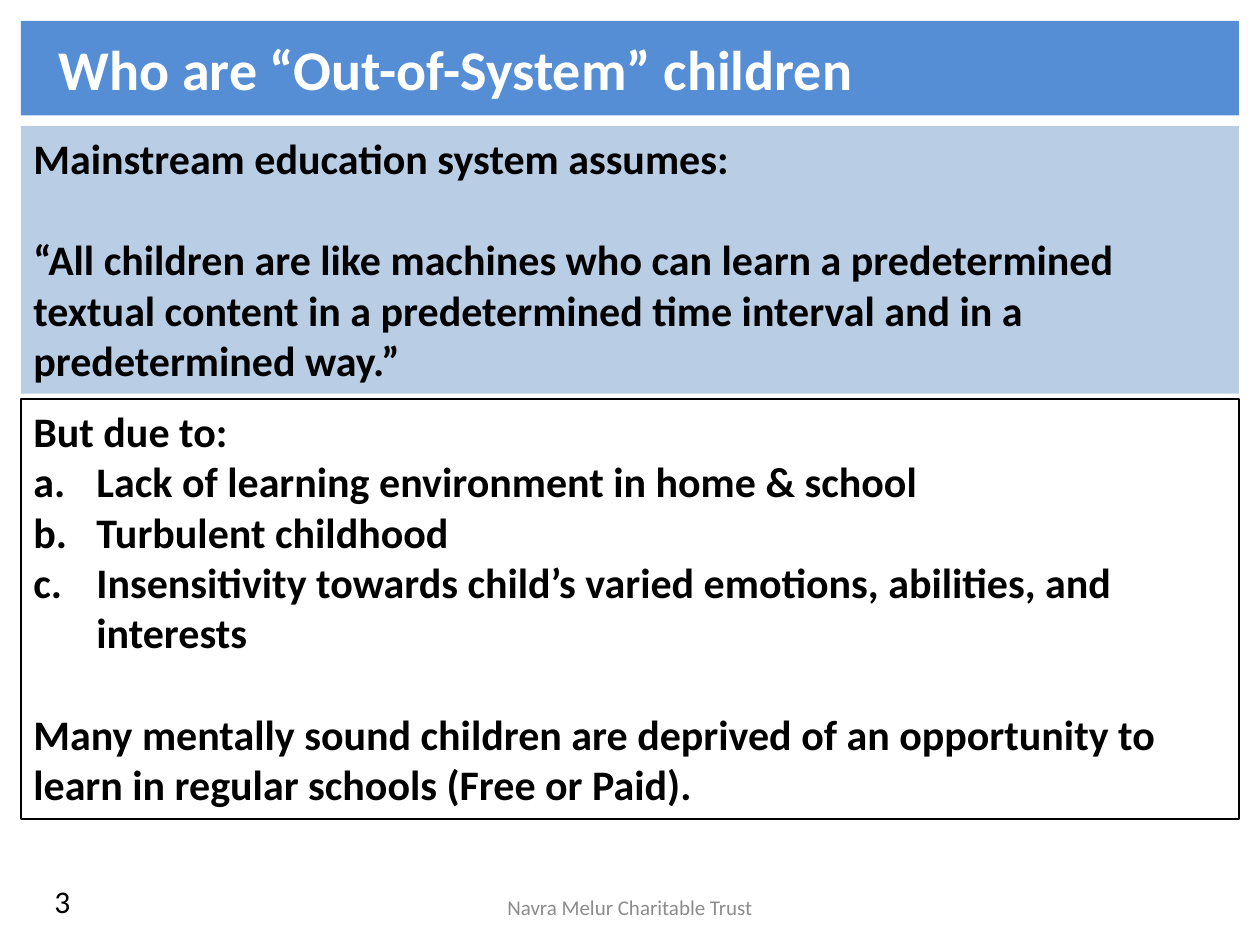
from dataclasses import dataclass
from typing import Optional

from lxml import etree
from pptx import Presentation
from pptx import util as u
from pptx.dml.color import RGBColor
from pptx.enum import shapes, text
from pptx.oxml.ns import qn


@dataclass(frozen=True)
class Theme:
    font: str = "Calibri"
    banner: str = "558ED5"
    panel: str = "B9CDE5"
    ink: str = "000000"
    light: str = "FFFFFF"
    muted: str = "8C8C8C"
    title_size: float = 32
    body_size: float = 24
    number_size: float = 18
    footer_size: float = 12
    body_gap: float = 29.3  # one line of body text


@dataclass(frozen=True)
class Area:
    """A place on the slide grid, in columns and rows."""
    column: float
    row: float
    columns: float
    rows: float


@dataclass(frozen=True)
class Line:
    words: str
    lettered: bool = False
    gap: float = 0


@dataclass(frozen=True)
class Panel:
    area: Area
    lines: tuple[Line, ...]
    fill: Optional[str] = None
    border: Optional[str] = None


THEME = Theme()
WIDTH, HEIGHT = u.Inches(10), u.Inches(7.5)
COLUMNS, ROWS = 60, 45

TITLE = Panel(Area(1, 1, 58, 4.5), (Line("Who are “Out-of-System” children"),), fill=THEME.banner)
PANELS = (
    Panel(Area(1, 6, 58, 12.75), (
        Line("Mainstream education system assumes:"),
        Line("“All children are like machines who can learn a predetermined textual content "
             "in a predetermined time interval and in a predetermined way.”", gap=THEME.body_gap),
    ), fill=THEME.panel),
    Panel(Area(1, 19, 58, 20), (
        Line("But due to:"),
        Line("Lack of learning environment in home & school", lettered=True),
        Line("Turbulent childhood", lettered=True),
        Line("Insensitivity towards child’s varied emotions, abilities, and interests", lettered=True),
        Line("Many mentally sound children are deprived of an opportunity to learn "
             "in regular schools (Free or Paid).", gap=THEME.body_gap),
    ), border=THEME.ink),
)


def place(area: Area) -> tuple[int, int, int, int]:
    return (round(WIDTH * area.column / COLUMNS), round(HEIGHT * area.row / ROWS),
            round(WIDTH * area.columns / COLUMNS), round(HEIGHT * area.rows / ROWS))


def set_indent(paragraph, left: float, first: float = 0, lettered: bool = False) -> None:
    properties = paragraph._p.get_or_add_pPr()
    properties.set("marL", str(u.Inches(left)))
    properties.set("indent", str(u.Inches(first)))
    if lettered:
        etree.SubElement(properties, qn("a:buFont"), typeface="+mj-lt")
        etree.SubElement(properties, qn("a:buAutoNum"), type="alphaLcPeriod")


def write(shape, lines: tuple[Line, ...], *, size: float, color: str, bold: bool = False,
          align=text.PP_ALIGN.LEFT, anchor=text.MSO_ANCHOR.TOP, indent: float = 0,
          grow: bool = False) -> None:
    frame = shape.text_frame
    frame.word_wrap = True
    frame.vertical_anchor = anchor
    frame.auto_size = text.MSO_AUTO_SIZE.SHAPE_TO_FIT_TEXT if grow else text.MSO_AUTO_SIZE.NONE
    for index, line in enumerate(lines):
        paragraph = frame.add_paragraph() if index else frame.paragraphs[0]
        if line.lettered:
            set_indent(paragraph, 0.5, -0.5, lettered=True)
        elif indent:
            set_indent(paragraph, indent)
        paragraph.alignment = align
        if line.gap:
            paragraph.space_before = u.Pt(line.gap)
        run = paragraph.add_run()
        run.text = line.words
        run.font.name = THEME.font
        run.font.size = u.Pt(size)
        run.font.bold = bold
        run.font.color.rgb = RGBColor.from_string(color)


def draw_panel(slide, panel: Panel, **text_format) -> None:
    shape = slide.shapes.add_shape(shapes.MSO_SHAPE.RECTANGLE, *place(panel.area))
    shape.shadow.inherit = False
    if panel.fill:
        shape.fill.solid()
        shape.fill.fore_color.rgb = RGBColor.from_string(panel.fill)
    else:
        shape.fill.background()
    if panel.border:
        shape.line.color.rgb = RGBColor.from_string(panel.border)
        shape.line.width = u.Pt(0.75)
    else:
        shape.line.fill.background()
    write(shape, panel.lines, **text_format)


def draw_label(slide, area: Area, words: str, **text_format) -> None:
    write(slide.shapes.add_textbox(*place(area)), (Line(words),), **text_format)


def main() -> None:
    presentation = Presentation()
    presentation.slide_width, presentation.slide_height = WIDTH, HEIGHT
    slide = presentation.slides.add_slide(presentation.slide_layouts[6])

    # Title banner
    draw_panel(slide, TITLE, size=THEME.title_size, color=THEME.light, bold=True,
               anchor=text.MSO_ANCHOR.MIDDLE, indent=0.2)

    # Page number and footer
    draw_label(slide, Area(2, 41.7, 14, 2.4), "3", size=THEME.number_size, color=THEME.ink)
    draw_label(slide, Area(20.5, 42, 19, 2.4), "Navra Melur Charitable Trust",
               size=THEME.footer_size, color=THEME.muted,
               align=text.PP_ALIGN.CENTER, anchor=text.MSO_ANCHOR.MIDDLE)

    # Body panels
    for panel in PANELS:
        draw_panel(slide, panel, size=THEME.body_size, color=THEME.ink, bold=True, grow=True)

    presentation.save("out.pptx")


if __name__ == "__main__":
    main()
